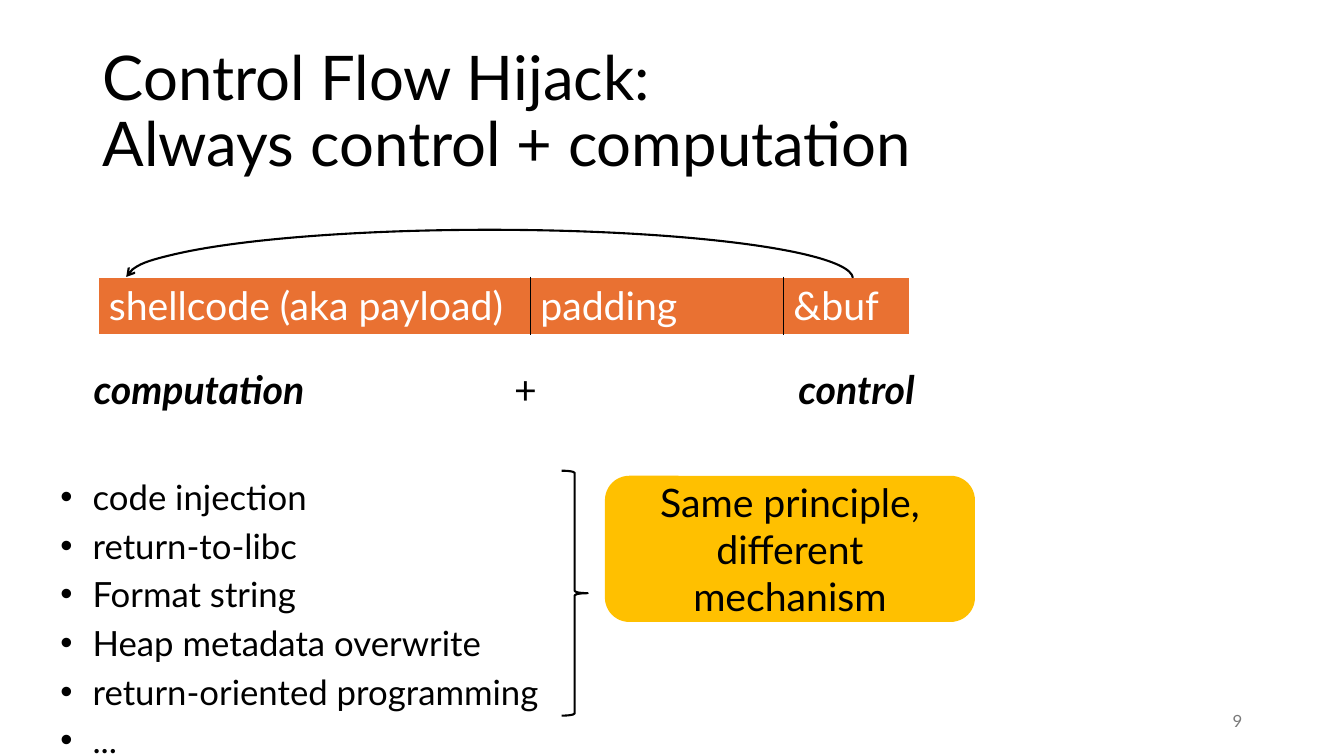
from pptx import Presentation
from pptx.dml.color import RGBColor
from pptx.enum.shapes import MSO_SHAPE
from pptx.enum.text import MSO_ANCHOR, PP_ALIGN
from pptx.oxml.ns import qn
from pptx.util import Inches, Pt
from lxml import etree

ARC = MSO_SHAPE.ARC
RIGHT_BRACE = MSO_SHAPE.RIGHT_BRACE
ROUNDED_RECTANGLE = MSO_SHAPE.ROUNDED_RECTANGLE
MIDDLE = MSO_ANCHOR.MIDDLE
TOP = MSO_ANCHOR.TOP
LEFT = PP_ALIGN.LEFT
CENTER = PP_ALIGN.CENTER
RIGHT = PP_ALIGN.RIGHT

FONT = "Lato"
BLACK = "000000"
WHITE = "FFFFFF"
GRAY = "797979"
ORANGE = "E97132"
YELLOW = "FFC000"

BUFFER_PARTS = [("shellcode (aka payload)", 4.28), ("padding", 2.51), ("&buf", 1.25)]
ATTACKS = [
    "code injection",
    "return-to-libc",
    "Format string",
    "Heap metadata overwrite",
    "return-oriented programming",
    "...",
]


def color(value):
    return RGBColor.from_string(value)


def format_run(run, size, font_color):
    run.font.name = FONT
    run.font.size = Pt(size)
    run.font.color.rgb = color(font_color)


def set_text(text_frame, text, size, font_color=BLACK, align=LEFT, anchor=TOP):
    text_frame.word_wrap = True
    text_frame.vertical_anchor = anchor
    text_frame.text = text
    for paragraph in text_frame.paragraphs:
        paragraph.alignment = align
        for run in paragraph.runs:
            format_run(run, size, font_color)


def add_text(slide, box, text, size, **style):
    shape = slide.shapes.add_textbox(*map(Inches, box))
    set_text(shape.text_frame, text, size, **style)
    return shape.text_frame


def add_outline(slide, kind, box):
    shape = slide.shapes.add_shape(kind, *map(Inches, box))
    shape.shadow.inherit = False
    shape.fill.background()
    shape.line.color.rgb = color(BLACK)
    shape.line.width = Pt(1.5)
    return shape


def add_jump_arrow(slide):
    arc = add_outline(slide, ARC, (1.25, 2.28, 7.21, 0.97))
    arc.adjustments[0] = 108.16
    arc.adjustments[1] = 215.92
    line = arc.line._get_or_add_ln()
    etree.SubElement(line, qn("a:headEnd"), type="arrow")


def add_divider(cell, side):
    line = etree.Element(qn(side), w=str(Pt(1)))
    fill = etree.SubElement(line, qn("a:solidFill"))
    etree.SubElement(fill, qn("a:srgbClr"), val=BLACK)
    cell._tc.get_or_add_tcPr().insert(0, line)


def add_buffer(slide):
    width = sum(part_width for _, part_width in BUFFER_PARTS)
    frame = slide.shapes.add_table(
        1, len(BUFFER_PARTS), Inches(0.98), Inches(2.75), Inches(width), Inches(0.57)
    )
    table = frame.table
    table.first_row = False
    table.horz_banding = False
    last = len(BUFFER_PARTS) - 1
    for index, (text, part_width) in enumerate(BUFFER_PARTS):
        table.columns[index].width = Inches(part_width)
        cell = table.cell(0, index)
        cell.fill.solid()
        cell.fill.fore_color.rgb = color(ORANGE)
        set_text(cell.text_frame, text, 28, font_color=WHITE)
        if index < last:
            add_divider(cell, "a:lnR")
        if index > 0:
            add_divider(cell, "a:lnL")


def add_equation(slide):
    text_frame = add_text(slide, (0.83, 3.58, 8.6, 0.57), "", 28)
    paragraph = text_frame.paragraphs[0]
    for text, strong in [("computation", True), ("\t+\t", False), ("control", True)]:
        run = paragraph.add_run()
        run.text = text
        format_run(run, 28, BLACK)
        run.font.bold = run.font.italic = strong
    tabs = etree.SubElement(paragraph._p.get_or_add_pPr(), qn("a:tabLst"))
    for position in (4.17, 6.99):
        etree.SubElement(tabs, qn("a:tab"), pos=str(Inches(position)), algn="l")


def add_attacks(slide):
    text_frame = add_text(slide, (0.5, 4.67, 9, 2.68), "\n".join(ATTACKS), 24.8)
    for paragraph in text_frame.paragraphs:
        paragraph.space_before = Pt(5)
        properties = paragraph._p.get_or_add_pPr()
        properties.set("marL", str(Inches(0.32)))
        properties.set("indent", str(Inches(-0.32)))
        etree.SubElement(properties, qn("a:buFont"), typeface="Arial")
        etree.SubElement(properties, qn("a:buChar"), char="•")


def add_callout(slide):
    shape = add_outline(slide, ROUNDED_RECTANGLE, (6, 4.72, 3.67, 1.45))
    shape.fill.solid()
    shape.fill.fore_color.rgb = color(YELLOW)
    shape.line.fill.background()
    set_text(
        shape.text_frame, "Same principle,\vdifferent mechanism", 28,
        align=CENTER, anchor=MIDDLE,
    )


def main():
    presentation = Presentation()
    presentation.slide_width = Inches(13.33)
    presentation.slide_height = Inches(7.5)
    slide = presentation.slides.add_slide(presentation.slide_layouts[6])

    title = add_text(
        slide, (0.92, 0.4, 11.5, 1.45),
        "Control Flow Hijack:\vAlways control + computation", 44, anchor=MIDDLE,
    )
    title.paragraphs[0].line_spacing = 0.9
    add_text(
        slide, (9.42, 6.95, 3, 0.4), "9", 12,
        font_color=GRAY, align=RIGHT, anchor=MIDDLE,
    )
    add_equation(slide)
    add_buffer(slide)
    add_jump_arrow(slide)
    add_attacks(slide)
    add_outline(slide, RIGHT_BRACE, (5.57, 4.67, 0.26, 2.43))
    add_callout(slide)
    presentation.save("out.pptx")


if __name__ == "__main__":
    main()
